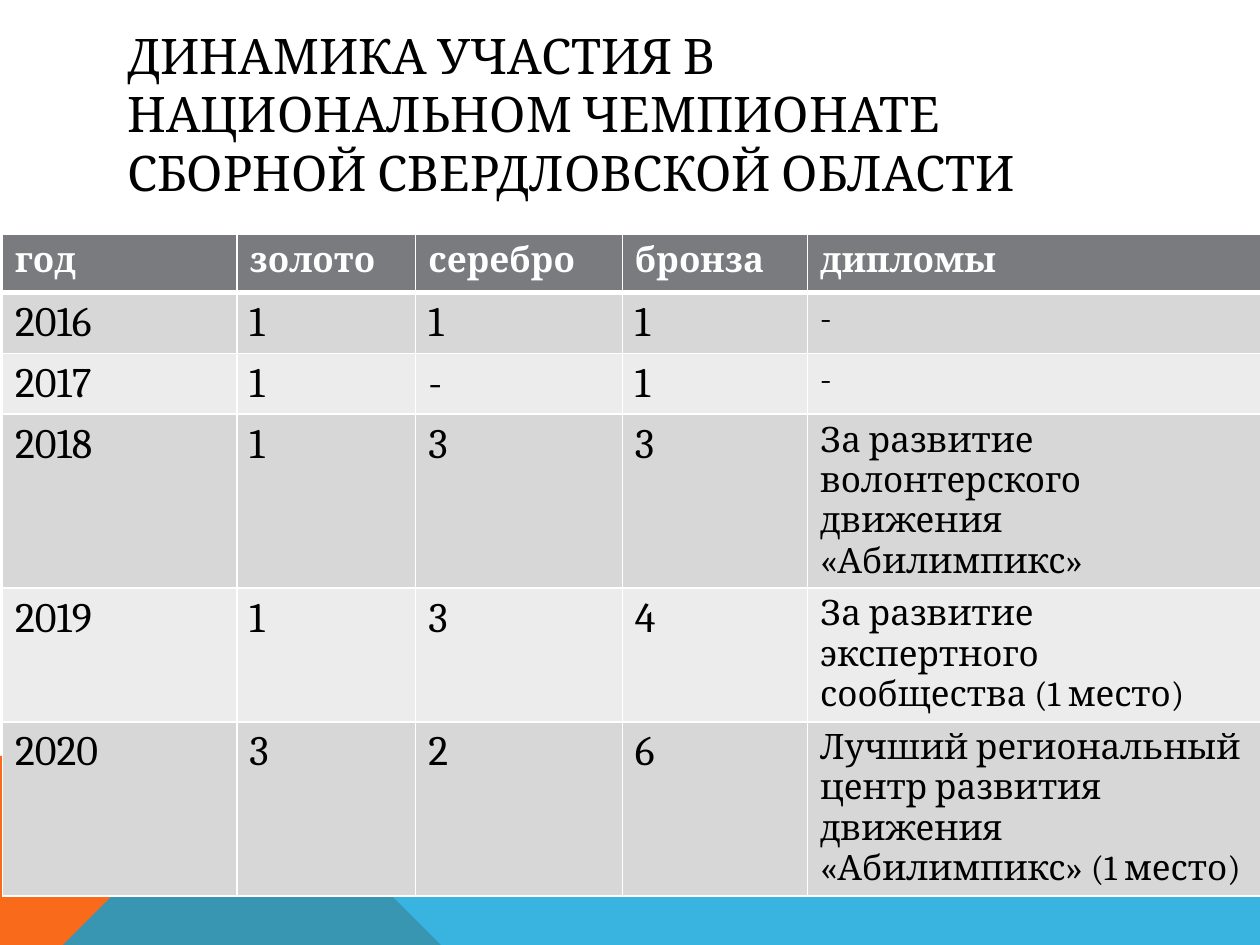
from typing import NamedTuple

from lxml import etree
from pptx import Presentation
from pptx.dml.color import RGBColor
from pptx.enum.text import MSO_ANCHOR, MSO_AUTO_SIZE, PP_ALIGN
from pptx.oxml.ns import qn
from pptx.util import Inches, Pt

LEFT = PP_ALIGN.LEFT
MIDDLE = MSO_ANCHOR.MIDDLE
NO_AUTOFIT = MSO_AUTO_SIZE.NONE
TITLE_ONLY = 5

WHITE = RGBColor(0xFF, 0xFF, 0xFF)
BLACK = RGBColor(0x00, 0x00, 0x00)
ORANGE = RGBColor(0xF9, 0x6A, 0x1B)
BLUE = RGBColor(0x08, 0xA1, 0xD9)
HEADER_GRAY = RGBColor(0x79, 0x7B, 0x7E)
BANDS = (RGBColor(0xD7, 0xD7, 0xD8), RGBColor(0xEC, 0xEC, 0xEC))

FONT = "Cambria"
WIDTH, HEIGHT = 10, 7.5
WEDGE_TOP, WEDGE_PEAK = 5.52, 2.23

TITLE = "ДИНАМИКА УЧАСТИЯ В НАЦИОНАЛЬНОМ ЧЕМПИОНАТЕ СБОРНОЙ СВЕРДЛОВСКОЙ ОБЛАСТИ"
HEADER = ("год", "золото", "серебро", "бронза", "дипломы")
COLUMN_WIDTHS = (1.86, 1.42, 1.64, 1.47, 3.62)


class Season(NamedTuple):
    year: str
    gold: str
    silver: str
    bronze: str
    diploma: str


SEASONS = (
    Season("2016", "1", "1", "1", "-"),
    Season("2017", "1", "-", "1", "-"),
    Season("2018", "1", "3", "3", "За развитие волонтерского движения «Абилимпикс»"),
    Season("2019", "1", "3", "4", "За развитие экспертного сообщества (1 место)"),
    Season("2020", "3", "2", "6",
           "Лучший региональный центр развития движения «Абилимпикс» (1 место)"),
)
ROW_HEIGHTS = (0.46, 0.48, 0.48, 1.38, 1.06, 1.38)


class Wedge(NamedTuple):
    points: tuple[tuple[float, float], ...]
    color: RGBColor
    opacity: int


WEDGES = (
    Wedge(((0, HEIGHT), (0, WEDGE_TOP), (WEDGE_PEAK, WEDGE_TOP), (3.91, HEIGHT)),
          ORANGE, 100),
    Wedge(((0, HEIGHT), (WEDGE_PEAK, WEDGE_TOP), (WIDTH, WEDGE_TOP), (WIDTH, HEIGHT)),
          BLUE, 80),
)


def add_run(p, text: str, size: float, color: RGBColor, bold: bool = False) -> None:
    r = p.add_run()
    r.text = text
    r.font.name = FONT
    r.font.size = Pt(size)
    r.font.bold = bold
    r.font.color.rgb = color


def add_wedge(slide, wedge: Wedge) -> None:
    start, *others = wedge.points
    builder = slide.shapes.build_freeform(*start, scale=Inches(1))
    builder.add_line_segments(others, close=True)
    sp = builder.convert_to_shape()
    sp.shadow.inherit = False
    sp.line.fill.background()
    sp.fill.solid()
    sp.fill.fore_color.rgb = wedge.color
    if wedge.opacity < 100:
        color = sp.fill._xPr.find(f".//{qn('a:srgbClr')}")
        etree.SubElement(color, qn("a:alpha"), val=str(wedge.opacity * 1000))


def set_borders(cell, bottom: float = 1, top: float = 1) -> None:
    """Put white borders before the fill, as the schema orders them."""
    widths = {"a:lnL": 1, "a:lnR": 1, "a:lnT": top, "a:lnB": bottom}
    tc_pr = cell._tc.get_or_add_tcPr()
    for position, (tag, width) in enumerate(widths.items()):
        line = etree.Element(qn(tag), w=str(Pt(width)))
        fill = etree.SubElement(line, qn("a:solidFill"))
        etree.SubElement(fill, qn("a:srgbClr"), val=str(WHITE))
        tc_pr.insert(position, line)


def add_results_table(slide) -> None:
    rows = (HEADER, *SEASONS)
    table = slide.shapes.add_table(
        len(rows), len(HEADER), Inches(0.02), Inches(1.86),
        Inches(sum(COLUMN_WIDTHS)), Inches(sum(ROW_HEIGHTS))).table
    for column, width in zip(table.columns, COLUMN_WIDTHS):
        column.width = Inches(width)
    for i, (row, height, texts) in enumerate(zip(table.rows, ROW_HEIGHTS, rows)):
        row.height = Inches(height)
        is_header = i == 0
        for j, (cell, text) in enumerate(zip(row.cells, texts)):
            is_diploma = j == len(HEADER) - 1
            cell.fill.solid()
            cell.fill.fore_color.rgb = HEADER_GRAY if is_header else BANDS[(i - 1) % 2]
            set_borders(cell, bottom=3 if is_header else 1, top=3 if i == 1 else 1)
            add_run(cell.text_frame.paragraphs[0], text,
                    20 if is_header or is_diploma else 24,
                    WHITE if is_header else BLACK, is_header)


def add_title(slide) -> None:
    title = slide.shapes.title
    title.left, title.top = Inches(0.91), Inches(0.21)
    title.width, title.height = Inches(8.22), Inches(1.38)
    tf = title.text_frame
    tf.word_wrap = True
    tf.auto_size = NO_AUTOFIT
    tf.vertical_anchor = MIDDLE
    p = tf.paragraphs[0]
    p.alignment = LEFT
    add_run(p, TITLE, 28, BLACK)


def main() -> None:
    prs = Presentation()
    prs.slide_width, prs.slide_height = Inches(WIDTH), Inches(HEIGHT)
    slide = prs.slides.add_slide(prs.slide_layouts[TITLE_ONLY])
    for wedge in WEDGES:
        add_wedge(slide, wedge)
    add_title(slide)
    add_results_table(slide)
    prs.save("out.pptx")


if __name__ == "__main__":
    main()
